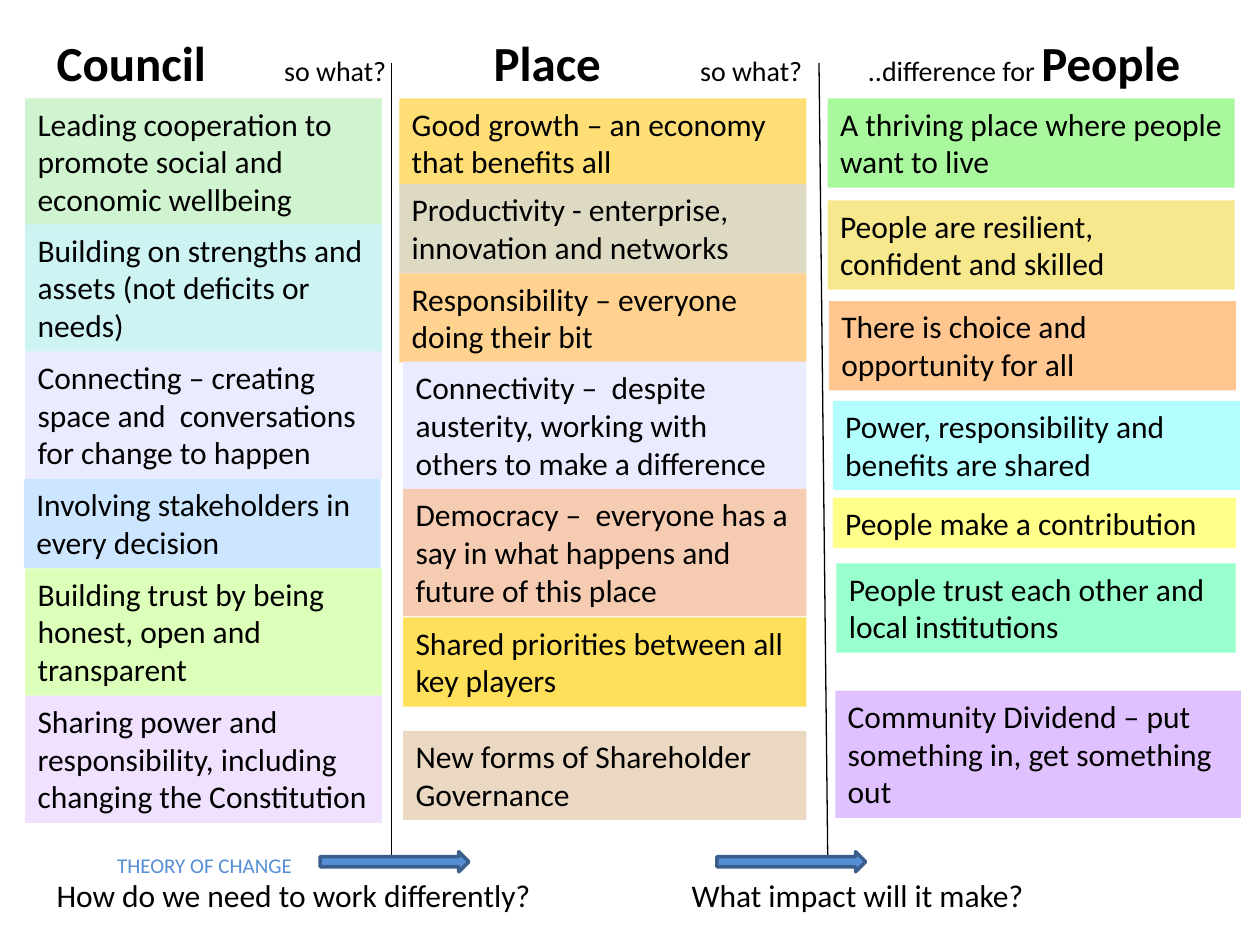
from dataclasses import dataclass

from lxml import etree
from pptx import Presentation
from pptx import util as u
from pptx.dml import color
from pptx.enum import shapes, text
from pptx.oxml import ns

Pt = u.Pt


@dataclass(frozen=True)
class Theme:
    font: str = "Calibri"
    ink: str = "000000"
    accent: str = "558ED5"
    edge: str = "3A5F8C"
    heading: int = 28
    aside: int = 16
    body: int = 18
    label: int = 12


THEME = Theme()
CARD_HEIGHTS = {1: 28.8, 2: 51, 3: 72.7}  # by number of text lines

# Each card: top and left within its column, width, lines, fill, wording
COUNCIL = [
    (0, 0.7, 203.8, 3, "D0F4D0", "Leading cooperation to promote social and economic wellbeing"),
    (72, 0.7, 203.8, 3, "CDF3F2", "Building on strengths and assets (not deficits or needs)"),
    (144.7, 0.7, 203.8, 3, "EBEBFF",
     "Connecting – creating space and  conversations for change to happen"),
    (217.4, 0, 203.8, 2, "CDE6FF", "Involving stakeholders in every decision"),
    (268.6, 0.7, 203.8, 3, "DCFFB9", "Building trust by being honest, open and transparent"),
    (341.3, 0.7, 203.8, 3, "F0E1FF",
     "Sharing power and responsibility, including changing the Constitution"),
]
PLACE = [
    (0, 0, 232.6, 2, "FFDE75", "Good growth – an economy that benefits all"),
    (49, 0, 232.6, 2, "DDD9C3", "Productivity - enterprise, innovation and networks"),
    (100, 0, 232.6, 2, "FFD28F", "Responsibility – everyone doing their bit"),
    (150.5, 2.2, 230.4, 3, "EBEBFF",
     "Connectivity –  despite austerity, working with others to make a difference"),
    (223.2, 2.2, 230.4, 3, "F5CBB1",
     "Democracy –  everyone has a say in what happens and  future of this place"),
    (296.6, 2.2, 230.4, 2, "FFE05B", "Shared priorities between all key players"),
    (361.4, 2.2, 230.4, 2, "EBD8C3", "New forms of Shareholder Governance"),
]
PEOPLE = [
    (0, 0, 232.6, 2, "A9F89E", "A thriving place where people want to live"),
    (58.3, 0, 232.6, 2, "F7E88D", "People are resilient, confident and skilled"),
    (115.9, 0.7, 232.6, 2, "FFC78F", "There is choice and opportunity for all"),
    (172.8, 2.9, 232.6, 2, "B3FFFF", "Power, responsibility and benefits are shared"),
    (228.2, 2.9, 230.4, 1, "FFFF89", "People make a contribution"),
    (265.7, 5, 228.2, 2, "99FFCC", "People trust each other and local institutions"),
    (338.4, 4.3, 231.8, 3, "E0C1FF", "Community Dividend – put something in, get something out"),
]


def rgb(value):
    return color.RGBColor.from_string(value)


def style_run(run, size, ink=THEME.ink, bold=False):
    run.font.name = THEME.font
    run.font.size = Pt(size)
    run.font.bold = bold
    run.font.color.rgb = rgb(ink)


def set_frame(frame):
    frame.word_wrap = True
    frame.auto_size = text.MSO_AUTO_SIZE.SHAPE_TO_FIT_TEXT
    frame.vertical_anchor = text.MSO_ANCHOR.TOP


def add_text(box, wording, size, ink=THEME.ink):
    set_frame(box.text_frame)
    box.text_frame.text = wording
    para = box.text_frame.paragraphs[0]
    para.alignment = text.PP_ALIGN.LEFT
    style_run(para.runs[0], size, ink)


def add_heading(box, area, parts, tab=None):
    """Fill a heading with (wording, is_main) parts, optionally set apart by a tab."""
    box.left, box.top, box.width, box.height = map(Pt, area)
    set_frame(box.text_frame)
    para = box.text_frame.paragraphs[0]
    para.alignment = text.PP_ALIGN.LEFT
    if tab:
        tabs = etree.SubElement(para._p.get_or_add_pPr(), ns.qn("a:tabLst"))
        etree.SubElement(tabs, ns.qn("a:tab"), pos=str(Pt(tab)), algn="l")
    for wording, is_main in parts:
        run = para.add_run()
        run.text = wording
        style_run(run, THEME.heading if is_main else THEME.aside, bold=is_main)


def add_headings(page, left, top):
    def text_box():
        return page.shapes.add_textbox(0, 0, 0, 0)

    add_heading(page.shapes.title, (left, top, 226.8, 41),
                [("Council", True), ("\tso what?", False)], tab=130)
    add_heading(text_box(), (left + 249.8, top, 195.8, 41),
                [("Place", True), ("\tso what?", False)], tab=118)
    add_heading(text_box(), (left + 463.7, top, 203.8, 41),
                [("..difference for ", False), ("People", True)])


def add_divider(page, start_x, end_x, top, bottom):
    line = page.shapes.add_connector(shapes.MSO_CONNECTOR.STRAIGHT,
                                     Pt(start_x), Pt(top), Pt(end_x), Pt(bottom))
    line.line.color.rgb = rgb(THEME.ink)
    line.line.width = Pt(0.75)
    etree.SubElement(line._element.spPr, ns.qn("a:effectLst"))


def add_column(page, left, top, cards):
    for offset, indent, width, lines, fill, wording in cards:
        card = page.shapes.add_shape(shapes.MSO_SHAPE.RECTANGLE, Pt(left + indent),
                                     Pt(top + offset), Pt(width), Pt(CARD_HEIGHTS[lines]))
        card.shadow.inherit = False
        card.fill.solid()
        card.fill.fore_color.rgb = rgb(fill)
        card.line.fill.background()
        add_text(card, wording, THEME.body)


def add_footer(page, left, top):
    # Theory of change label and arrows
    label = page.shapes.add_textbox(Pt(left + 34.6), Pt(top), Pt(123), Pt(21.8))
    add_text(label, "THEORY OF CHANGE", THEME.label, THEME.accent)
    for offset in (157.7, 384.5):
        arrow = page.shapes.add_shape(shapes.MSO_SHAPE.RIGHT_ARROW, Pt(left + offset),
                                      Pt(top + 2.9), Pt(85), Pt(11.5))
        arrow.shadow.inherit = False
        arrow.fill.solid()
        arrow.fill.fore_color.rgb = rgb(THEME.accent)
        arrow.line.color.rgb = rgb(THEME.edge)
        arrow.line.width = Pt(2)
    # Closing questions
    for offset, wording in ((0, "How do we need to work differently?"),
                            (362.9, "What impact will it make?")):
        question = page.shapes.add_textbox(Pt(left + offset), Pt(top + 13), Pt(289.4), Pt(28.8))
        add_text(question, wording, THEME.body)


def main():
    deck = Presentation()
    deck.slide_width, deck.slide_height = Pt(720), Pt(540)
    page = deck.slides.add_slide(deck.slide_layouts[5])
    add_headings(page, 25.2, 15.1)
    add_divider(page, 223.9, 223.9, 36, 489.6)
    add_divider(page, 468, 473, 36, 489.6)
    add_footer(page, 25.2, 483.8)
    for left, cards in ((13.7, COUNCIL), (228.2, PLACE), (473, PEOPLE)):
        add_column(page, left, 56.2, cards)
    deck.save("out.pptx")


if __name__ == "__main__":
    main()
